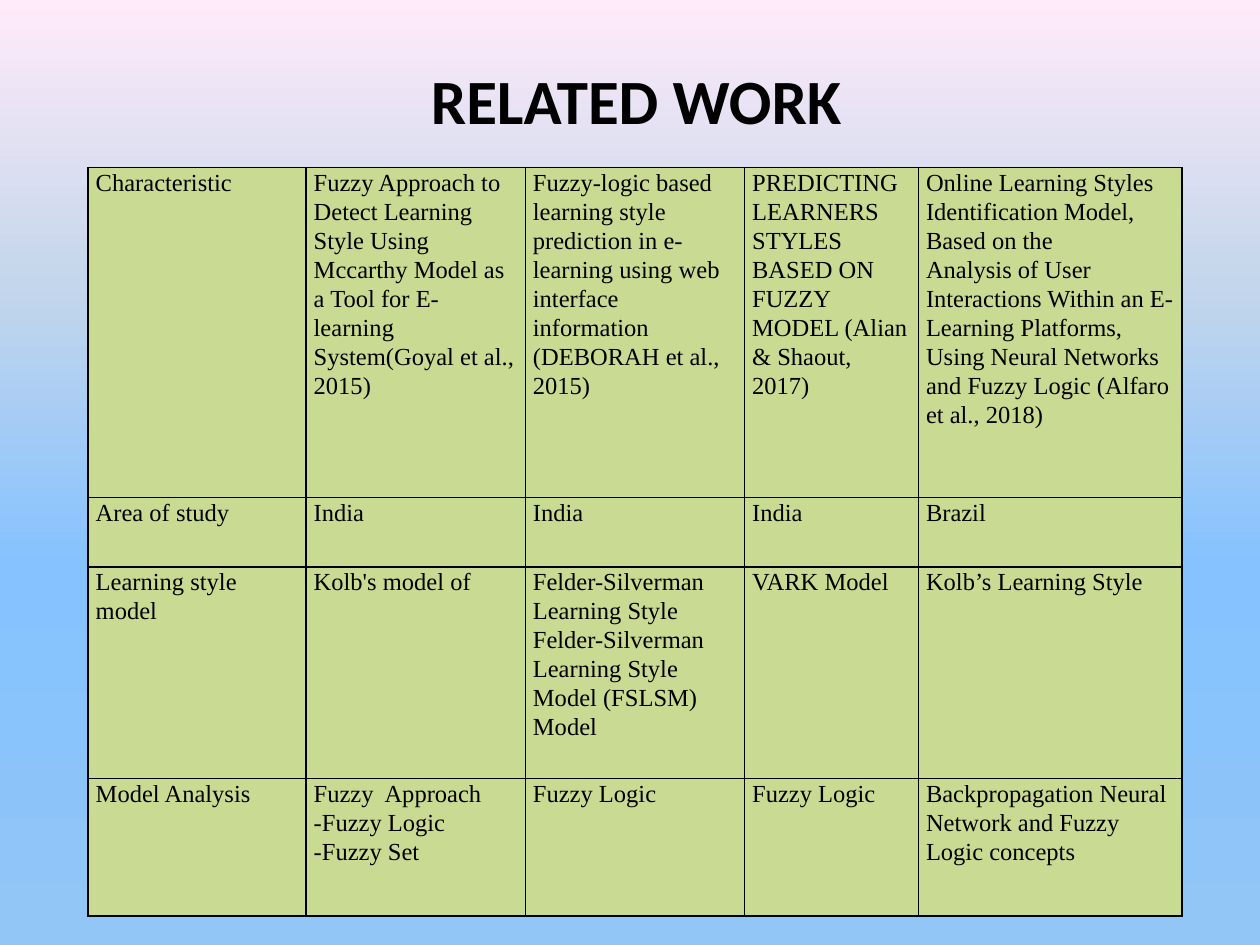
from lxml.etree import SubElement
from pptx import Presentation
from pptx.dml.color import RGBColor
from pptx.enum.text import MSO_ANCHOR, PP_ALIGN
from pptx.oxml.ns import qn
from pptx.util import Inches, Pt

BLACK = "000000"
CELL_GREEN = "C9DA92"
BACKGROUND_STOPS = [(0, "91C6F7"), (40, "85C2FF"), (70, "C4D6EB"), (100, "FFEBFA")]
COLUMN_WIDTHS = [1.73, 1.74, 1.74, 1.38, 2.09]
ROW_HEIGHTS = [2.62, 0.55, 1.68, 1.09]
STUDIES = [
    [
        ["Characteristic"],
        ["Fuzzy Approach to Detect Learning Style Using Mccarthy Model as a Tool "
         "for E-learning System(Goyal et al., 2015)"],
        ["Fuzzy-logic based learning style prediction in e-learning using web "
         "interface information (DEBORAH et al., 2015)"],
        ["PREDICTING LEARNERS STYLES BASED ON FUZZY MODEL (Alian & Shaout, 2017)"],
        ["Online Learning Styles Identification Model, Based on the",
         "Analysis of User Interactions Within an E-Learning Platforms, Using "
         "Neural Networks and Fuzzy Logic (Alfaro et al., 2018)"],
    ],
    [["Area of study"], ["India"], ["India"], ["India"], ["Brazil"]],
    [
        ["Learning style model"],
        ["Kolb's model of"],
        ["Felder-Silverman Learning Style Felder-Silverman Learning Style Model (FSLSM) Model"],
        ["VARK Model"],
        ["Kolb’s Learning Style"],
    ],
    [
        ["Model Analysis"],
        ["Fuzzy  Approach", "-Fuzzy Logic", "-Fuzzy Set"],
        ["Fuzzy Logic"],
        ["Fuzzy Logic"],
        ["Backpropagation Neural Network and Fuzzy Logic concepts"],
    ],
]


def color(value):
    return RGBColor.from_string(value)


def add_run(paragraph, text, font_name, size, bold=False):
    run = paragraph.add_run()
    run.text = text
    run.font.name = font_name
    run.font.size = Pt(size)
    run.font.bold = bold
    run.font.color.rgb = color(BLACK)


def set_background(slide):
    fill = slide.background.fill
    fill.gradient()
    fill.gradient_angle = 90
    stop_list = next(slide.element.iter(qn("a:gsLst")))
    for stop in list(stop_list):
        stop_list.remove(stop)
    for position, value in BACKGROUND_STOPS:
        stop = SubElement(stop_list, qn("a:gs"), pos=str(position * 1000))
        SubElement(stop, qn("a:srgbClr"), val=value)


def set_title(slide, text):
    title = slide.shapes.title
    title.left, title.top = Inches(0.55), Inches(0.16)
    title.width, title.height = Inches(9), Inches(1.25)
    title.text_frame.vertical_anchor = MSO_ANCHOR.MIDDLE
    paragraph = title.text_frame.paragraphs[0]
    paragraph.alignment = PP_ALIGN.CENTER
    add_run(paragraph, text, "Calibri", 36, bold=True)


def set_borders(cell):
    properties = cell._tc.get_or_add_tcPr()
    for index, side in enumerate(("a:lnL", "a:lnR", "a:lnT", "a:lnB")):
        line = properties.makeelement(qn(side), {"w": str(Pt(1))})
        properties.insert(index, line)
        fill = SubElement(line, qn("a:solidFill"))
        SubElement(fill, qn("a:srgbClr"), val=BLACK)


def fill_cell(cell, texts):
    cell.margin_left = cell.margin_right = Inches(0.06)
    cell.margin_top = cell.margin_bottom = 0
    cell.fill.solid()
    cell.fill.fore_color.rgb = color(CELL_GREEN)
    set_borders(cell)
    frame = cell.text_frame
    for index, text in enumerate(texts):
        paragraph = frame.add_paragraph() if index else frame.paragraphs[0]
        paragraph.line_spacing = 1.07
        add_run(paragraph, text, "Times New Roman", 14)


def add_study_table(slide):
    shape = slide.shapes.add_table(
        len(ROW_HEIGHTS), len(COLUMN_WIDTHS), Inches(0.7), Inches(1.33),
        Inches(sum(COLUMN_WIDTHS)), Inches(sum(ROW_HEIGHTS)))
    table = shape.table
    table.first_row = table.horz_banding = False
    for column, width in zip(table.columns, COLUMN_WIDTHS):
        column.width = Inches(width)
    for row, height, contents in zip(table.rows, ROW_HEIGHTS, STUDIES):
        row.height = Inches(height)
        for cell, texts in zip(row.cells, contents):
            fill_cell(cell, texts)


def main():
    presentation = Presentation()
    presentation.slide_width = Inches(10)
    presentation.slide_height = Inches(7.5)
    slide = presentation.slides.add_slide(presentation.slide_layouts[5])
    set_background(slide)
    set_title(slide, "RELATED WORK")
    add_study_table(slide)
    presentation.save("out.pptx")


if __name__ == "__main__":
    main()
